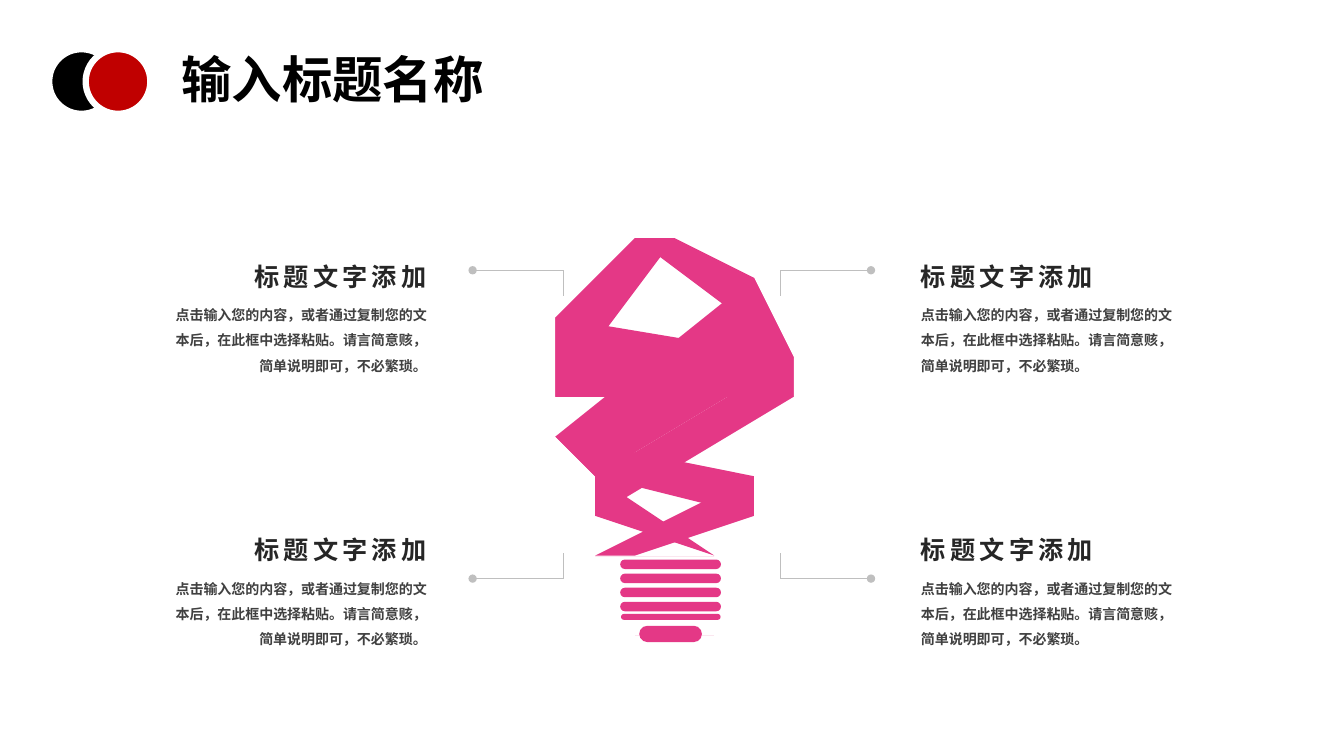
"""Build a slide with a ribbon light bulb and four annotated callouts."""
import pptx
import pptx.dml.color
import pptx.enum.shapes
import pptx.enum.text
import pptx.oxml
import pptx.oxml.ns
import pptx.util

Cm = pptx.util.Cm
Pt = pptx.util.Pt
RGBColor = pptx.dml.color.RGBColor
SHAPE = pptx.enum.shapes.MSO_SHAPE
ALIGN = pptx.enum.text.PP_ALIGN

PINK = RGBColor(0xE4, 0x38, 0x86)
RED = RGBColor(0xC0, 0x00, 0x00)
BLACK = RGBColor(0x00, 0x00, 0x00)
WHITE = RGBColor(0xFF, 0xFF, 0xFF)
HEADING_GRAY = RGBColor(0x26, 0x26, 0x26)
BODY_GRAY = RGBColor(0x40, 0x40, 0x40)
LEADER_GRAY = RGBColor(0xBF, 0xBF, 0xBF)
FONT = "Noto Sans CJK JP"

TITLE = "输入标题名称"
HEADING = "标题文字添加"
BODY = "点击输入您的内容，或者通过复制您的文本后，在此框中选择粘贴。请言简意赅，简单说明即可，不必繁琐。"

HEADING_WIDTH, BODY_WIDTH, BODY_DROP = 5.13, 6.83, 0.94
SIDES = [
    {"align": ALIGN.LEFT, "edge": 22.96, "outer": 21.95, "inner": 19.66},
    {"align": ALIGN.RIGHT, "edge": 11.0, "outer": 11.91, "inner": 14.2},
]
ROWS = [
    {"top": 6.45, "leader": 6.81, "tick": 0.64},
    {"top": 13.34, "leader": 14.58, "tick": -0.64},
]

CORNERS = {
    "crown_left": (15.98, 6.45), "crown_right": (17.45, 6.45),
    "shoulder": (19.15, 7.32), "right_tip": (19.89, 8.92),
    "left_top": (13.97, 8.46), "left_bottom": (13.97, 10.19),
    "right_top": (19.89, 9.19), "right_bottom": (19.84, 10.01),
    "fold_top": (14.43, 11.23), "fold_bottom": (14.63, 11.61),
    "waist_top": (18.82, 12.17), "waist_bottom": (18.57, 12.98),
    "bend_top": (15.04, 12.32), "bend_bottom": (15.14, 12.73),
    "base_left": (15.47, 13.67), "base_right": (18.36, 13.64),
    "foot_left": (15.7, 13.87), "foot_right": (18.19, 13.87),
    "neck_left": (15.72, 15.62), "neck_right": (18.08, 15.62),
    "neck_foot_left": (16.05, 15.95), "neck_foot_right": (17.75, 15.95),
}
RIBBONS = [
    "neck_left neck_right neck_foot_right neck_foot_left",
    "crown_left right_tip shoulder crown_right",
    "left_top right_top right_bottom left_bottom",
    "shoulder fold_top fold_bottom right_tip",
    "fold_top waist_top waist_bottom fold_bottom",
    "right_top bend_top bend_bottom right_bottom",
    "bend_top base_right foot_right bend_bottom",
    "crown_left left_top left_bottom crown_right",
    "foot_left waist_bottom waist_top base_left",
    "base_left base_right foot_right foot_left",
]
THREADS = [(15.63, 14.1 + 0.355 * turn, 2.54, 0.24) for turn in range(4)]
THREADS += [(15.65, 15.47, 2.51, 0.15), (16.11, 15.77, 1.58, 0.41)]
BADGE = [(1.24, BLACK), (2.16, RED)]


def paint(shape, color):
    shape.shadow.inherit = False
    shape.fill.solid()
    shape.fill.fore_color.rgb = color
    shape.line.fill.background()


def add_text(shapes, box, text, size, color, align=ALIGN.LEFT, leading=None, tracking=None):
    frame = shapes.add_textbox(*map(Cm, box)).text_frame
    frame.word_wrap = True
    frame.auto_size = pptx.enum.text.MSO_AUTO_SIZE.SHAPE_TO_FIT_TEXT
    frame.text = text
    paragraph = frame.paragraphs[0]
    paragraph.alignment = align
    if leading:
        paragraph.line_spacing = leading
    run = paragraph.runs[0]
    run.font.size = Pt(size)
    run.font.bold = True
    run.font.color.rgb = color
    run.font.name = FONT
    properties = run.font._element if hasattr(run.font, "_element") else run._r.get_or_add_rPr()
    if tracking:
        properties.set("spc", str(tracking * 100))
    east_asian = pptx.oxml.parse_xml(f'<a:ea {pptx.oxml.ns.nsdecls("a")} typeface="{FONT}"/>')
    properties.append(east_asian)


def add_leader(shapes, start, end, dotted):
    leader = shapes.add_connector(
        pptx.enum.shapes.MSO_CONNECTOR.STRAIGHT, *map(Cm, start + end))
    leader.line.color.rgb = LEADER_GRAY
    leader.line.width = Pt(0.5)
    namespace = pptx.oxml.ns.nsdecls("a")
    if dotted:
        leader.line._get_or_add_ln().append(
            pptx.oxml.parse_xml(f'<a:headEnd {namespace} type="oval"/>'))
    leader._element.spPr.append(pptx.oxml.parse_xml(f"<a:effectLst {namespace}/>"))


def add_callout(shapes, side, row):
    on_left = side["align"] == ALIGN.RIGHT
    heading_left = side["edge"] - HEADING_WIDTH * on_left
    body_left = side["edge"] - BODY_WIDTH * on_left
    add_text(shapes, (body_left, row["top"] + BODY_DROP, BODY_WIDTH, 2.18),
             BODY, 10, BODY_GRAY, side["align"], leading=1.5)
    add_text(shapes, (heading_left, row["top"], HEADING_WIDTH, 1.02),
             HEADING, 18, HEADING_GRAY, side["align"], tracking=3)
    corner = (side["inner"], row["leader"])
    add_leader(shapes, (side["outer"], row["leader"]), corner, True)
    add_leader(shapes, corner, (side["inner"], row["leader"] + row["tick"]), False)


def add_bulb(shapes):
    for box in THREADS:
        thread = shapes.add_shape(SHAPE.ROUNDED_RECTANGLE, *map(Cm, box))
        thread.adjustments[0] = 0.5
        paint(thread, PINK)
    for ribbon in RIBBONS:
        first, *others = [CORNERS[corner] for corner in ribbon.split()]
        outline = shapes.build_freeform(*first, scale=Cm(1))
        outline.add_line_segments(others, close=True)
        paint(outline.convert_to_shape(), PINK)


def add_header(shapes):
    for left, color in BADGE:
        disc = shapes.add_shape(SHAPE.OVAL, *map(Cm, (left, 1.24, 1.63, 1.63)))
        paint(disc, color)
        disc.line.color.rgb = WHITE
        disc.line.width = Pt(4.5)
    add_text(shapes, (4.32, 1.09, 8.99, 1.8), TITLE, 36, BLACK)


def main():
    deck = pptx.Presentation()
    deck.slide_width, deck.slide_height = Cm(33.87), Cm(19.05)
    shapes = deck.slides.add_slide(deck.slide_layouts[6]).shapes
    add_bulb(shapes)
    for side in SIDES:
        for row in ROWS:
            add_callout(shapes, side, row)
    add_header(shapes)
    deck.save("out.pptx")


if __name__ == "__main__":
    main()
